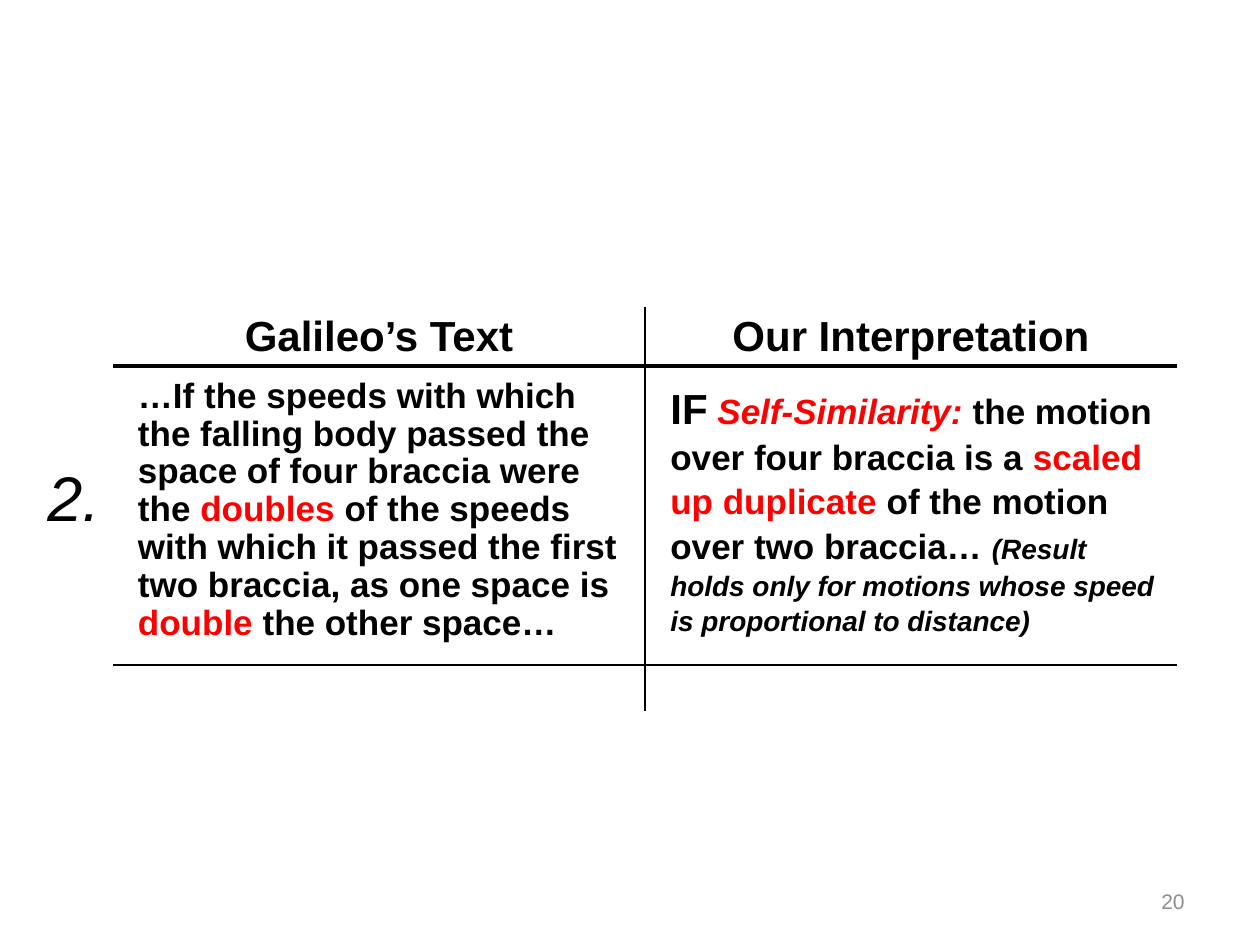
import pptx
import pptx.dml.color
import pptx.enum.text
import pptx.util
from pptx.oxml import parse_xml
from pptx.oxml.ns import nsdecls

ALIGN = pptx.enum.text.PP_ALIGN
ANCHOR = pptx.enum.text.MSO_ANCHOR

THEME = {
    "font": "Arial",
    "ink": "000000", "accent": "FF0000", "muted": "8C8C8C",
    "heading": 24, "body": 20, "note": 16, "number": 36, "footer": 12,
}

# Each span: text, size, colour, style letters (b = bold, i = italic)
HEADINGS = ["Galileo’s Text", "Our Interpretation"]
GALILEO = [
    ("…If the speeds with which the falling body passed the space of four braccia were the ",
     "body", "ink", "b"),
    ("doubles ", "body", "accent", "b"),
    ("of the speeds with which it passed the first two braccia, as one space is ",
     "body", "ink", "b"),
    ("double ", "body", "accent", "b"),
    ("the other space…", "body", "ink", "b"),
]
INTERPRETATION = [
    ("IF", "heading", "ink", "b"),
    (" ", "body", "ink", "b"),
    ("Self-Similarity: ", "body", "accent", "bi"),
    ("the motion over four braccia is a ", "body", "ink", "b"),
    ("scaled up duplicate ", "body", "accent", "b"),
    ("of the motion over two braccia… ", "body", "ink", "b"),
    ("(Result holds only for motions whose speed is proportional to distance)",
     "note", "ink", "bi"),
]
STEP = [("2.", "number", "ink", "i")]
PAGE_NUMBER = [("20", "footer", "muted", "")]

TABLE_LEFT, TABLE_TOP = 113, 307
COLUMN_WIDTH = 532
ROW_HEIGHTS = [59, 299, 45]
THIN, THICK = 1, 2


def px(count):
    return pptx.util.Emu(round(count * 914400 / 126))


def write(frame, spans, align=ALIGN.LEFT, spacing=None):
    para = frame.paragraphs[0]
    para.alignment = align
    if spacing:
        para.line_spacing = spacing
    for text, size, colour, style in spans:
        span = para.add_run()
        span.text = text
        span.font.name = THEME["font"]
        span.font.size = pptx.util.Pt(THEME[size])
        span.font.color.rgb = pptx.dml.color.RGBColor.from_string(THEME[colour])
        span.font.bold = "b" in style
        span.font.italic = "i" in style


def add_text(page, place, spans, wrap=True, anchor=ANCHOR.TOP, **layout):
    frame = page.shapes.add_textbox(*map(px, place)).text_frame
    frame.word_wrap = wrap
    frame.vertical_anchor = anchor
    write(frame, spans, **layout)


def set_borders(cell, widths):
    """Draw the sides named in widths (points) and hide the others."""
    properties = cell._tc.get_or_add_tcPr()
    for index, side in enumerate("LRTB"):
        width = widths.get(side, 0)
        fill = (f'<a:solidFill><a:srgbClr val="{THEME["ink"]}"/></a:solidFill>'
                if width else "<a:noFill/>")
        properties.insert(index, parse_xml(
            f'<a:ln{side} {nsdecls("a")} w="{pptx.util.Pt(width)}">{fill}</a:ln{side}>'))


def add_comparison(page):
    table = page.shapes.add_table(
        len(ROW_HEIGHTS), len(HEADINGS), px(TABLE_LEFT), px(TABLE_TOP),
        px(COLUMN_WIDTH * len(HEADINGS)), px(sum(ROW_HEIGHTS))).table
    table.first_row = table.horz_banding = False
    for column in table.columns:
        column.width = px(COLUMN_WIDTH)
    rules = [0, THICK, THIN, 0]  # above each row, then below the last
    for r, height in enumerate(ROW_HEIGHTS):
        table.rows[r].height = px(height)
        for c in range(len(HEADINGS)):
            cell = table.cell(r, c)
            cell.fill.background()
            cell.margin_top = cell.margin_bottom = px(4)
            set_borders(cell, {"T": rules[r], "B": rules[r + 1],
                               "R" if c == 0 else "L": THIN})
    for c, heading in enumerate(HEADINGS):
        cell = table.cell(0, c)
        cell.vertical_anchor = ANCHOR.MIDDLE
        write(cell.text_frame, [(heading, "heading", "ink", "b")], ALIGN.CENTER)
    quote = table.cell(1, 0)
    quote.margin_left = quote.margin_right = px(25)
    quote.margin_top = quote.margin_bottom = px(12)
    write(quote.text_frame, GALILEO, spacing=0.97)


def main():
    deck = pptx.Presentation()
    deck.slide_width, deck.slide_height = px(1260), px(945)
    page = deck.slides.add_slide(deck.slide_layouts[6])
    add_comparison(page)
    add_text(page, (35, 452, 95, 89), STEP, wrap=False)
    add_text(page, (658, 373, 520, 258), INTERPRETATION, spacing=1.06)
    add_text(page, (903, 876, 294, 50), PAGE_NUMBER,
             anchor=ANCHOR.MIDDLE, align=ALIGN.RIGHT)
    deck.save("out.pptx")


if __name__ == "__main__":
    main()
